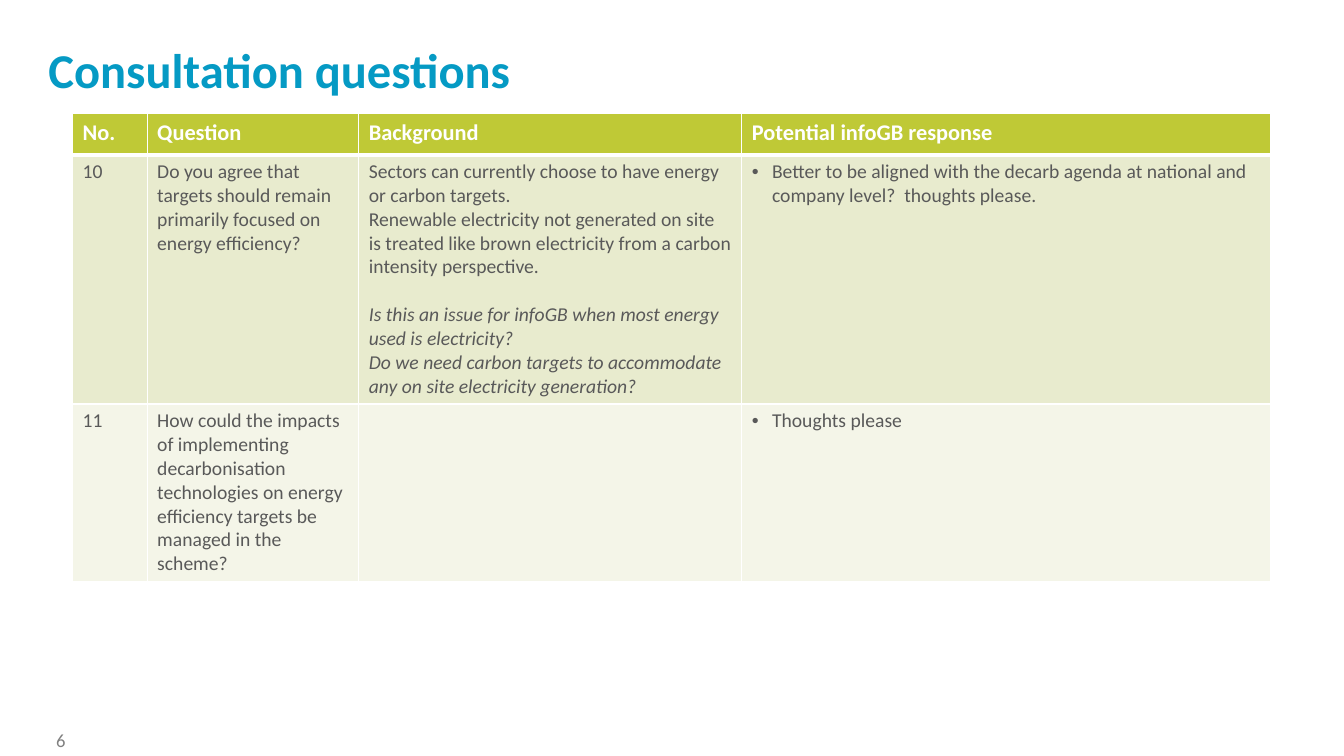
from dataclasses import dataclass

from lxml.etree import SubElement
from pptx import Presentation
from pptx.dml.color import RGBColor
from pptx.enum.text import MSO_ANCHOR as Anchor, PP_ALIGN as Align
from pptx.oxml.ns import qn
from pptx.util import Pt

COLORS = {
    "title": "059AC4",
    "header": "BFC936",
    "odd_row": "E8EBCE",
    "even_row": "F4F5E8",
    "body": "595959",
    "page": "808080",
    "white": "FFFFFF",
}
FONT = "Calibri"
TITLE_FORMAT = {"name": FONT, "size": Pt(34.7), "bold": True, "italic": False}
HEADER_FORMAT = {"name": FONT, "size": Pt(16), "bold": True, "italic": False}
BODY_FORMAT = {"name": FONT, "size": Pt(14), "bold": False, "italic": False}
PAGE_FORMAT = {"name": FONT, "size": Pt(13.3), "bold": False, "italic": False}

COLUMN_WIDTHS = (53.28, 151.2, 273.6, 378)
TABLE_LEFT, TABLE_TOP = 51.84, 81.36
BULLET_INDENT = Pt(14.4)
HEADER_RULE, CELL_RULE = Pt(3), Pt(1)


@dataclass(frozen=True)
class Line:
    text: str
    italic: bool = False
    bullet: bool = False
    space_before: float = 0


@dataclass(frozen=True)
class Row:
    height: float
    fill: str
    color: str
    format: dict
    cells: tuple[tuple[Line, ...], ...]


ROWS = (
    Row(29.2, "header", "white", HEADER_FORMAT, (
        (Line("No."),),
        (Line("Question"),),
        (Line("Background"),),
        (Line("Potential infoGB response"),),
    )),
    Row(178, "odd_row", "body", BODY_FORMAT, (
        (Line("10"),),
        (Line("Do you agree that targets should remain primarily focused on "
              "energy efficiency?"),),
        (
            Line("Sectors can currently choose to have energy or carbon targets."),
            Line("Renewable electricity not generated on site is treated like "
                 "brown electricity from a carbon intensity perspective."),
            Line("Is this an issue for infoGB when most energy used is "
                 "electricity?", italic=True, space_before=17),
            Line("Do we need carbon targets to accommodate any on site "
                 "electricity generation?", italic=True),
        ),
        (Line("Better to be aligned with the decarb agenda at national and "
              "company level?  thoughts please.", bullet=True),),
    )),
    Row(126.8, "even_row", "body", BODY_FORMAT, (
        (Line("11"),),
        (Line("How could the impacts of implementing decarbonisation "
              "technologies on energy efficiency targets be managed in the "
              "scheme?"),),
        (),
        (Line("Thoughts please", bullet=True),),
    )),
)


def rgb(color: str) -> RGBColor:
    return RGBColor.from_string(COLORS[color])


def format_font(font, values: dict, color: str) -> None:
    for attribute, value in values.items():
        setattr(font, attribute, value)
    font.color.rgb = rgb(color)


def add_bullet(paragraph) -> None:
    properties = paragraph._p.get_or_add_pPr()
    properties.set("marL", str(BULLET_INDENT))
    properties.set("indent", str(-BULLET_INDENT))
    SubElement(properties, qn("a:buFont"), typeface="Arial")
    SubElement(properties, qn("a:buChar"), char="•")


def add_borders(cell, top: int, bottom: int) -> None:
    properties = cell._tc.get_or_add_tcPr()
    widths = {"lnL": CELL_RULE, "lnR": CELL_RULE, "lnT": top, "lnB": bottom}
    for side, width in widths.items():
        border = SubElement(properties, qn(f"a:{side}"), w=str(width))
        fill = SubElement(border, qn("a:solidFill"))
        SubElement(fill, qn("a:srgbClr"), val=COLORS["white"])


def write_lines(frame, lines: tuple[Line, ...], values: dict, color: str) -> None:
    for index, line in enumerate(lines):
        paragraph = frame.add_paragraph() if index else frame.paragraphs[0]
        if line.space_before:
            paragraph.space_before = Pt(line.space_before)
        if line.bullet:
            add_bullet(paragraph)
        run = paragraph.add_run()
        run.text = line.text
        format_font(run.font, values | {"italic": line.italic}, color)


def add_title(slide) -> None:
    title = slide.shapes.title
    title.left, title.top, title.width, title.height = map(Pt, (27.36, 12.24, 864, 74.16))
    title.text_frame.vertical_anchor = Anchor.MIDDLE
    write_lines(title.text_frame, (Line("Consultation questions"),), TITLE_FORMAT, "title")
    title.text_frame.paragraphs[0].alignment = Align.LEFT


def add_questions(slide) -> None:
    table = slide.shapes.add_table(
        len(ROWS), len(COLUMN_WIDTHS), Pt(TABLE_LEFT), Pt(TABLE_TOP),
        Pt(sum(COLUMN_WIDTHS)), Pt(sum(row.height for row in ROWS)),
    ).table
    for column, width in zip(table.columns, COLUMN_WIDTHS):
        column.width = Pt(width)
    for index, row in enumerate(ROWS):
        table.rows[index].height = Pt(row.height)
        top = HEADER_RULE if index == 1 else CELL_RULE
        bottom = HEADER_RULE if index == 0 else CELL_RULE
        for cell, lines in zip(table.rows[index].cells, row.cells):
            add_borders(cell, top, bottom)
            cell.fill.solid()
            cell.fill.fore_color.rgb = rgb(row.fill)
            write_lines(cell.text_frame, lines, row.format, row.color)


def add_page_number(slide) -> None:
    page = slide.shapes.add_textbox(Pt(33.12), Pt(516.96), Pt(40.32), Pt(28.8))
    page.text_frame.word_wrap = True
    write_lines(page.text_frame, (Line("6"),), PAGE_FORMAT, "page")


def main() -> None:
    deck = Presentation()
    deck.slide_width, deck.slide_height = Pt(960), Pt(540)
    slide = deck.slides.add_slide(deck.slide_layouts[5])
    add_title(slide)
    add_page_number(slide)
    add_questions(slide)
    deck.save("out.pptx")


if __name__ == "__main__":
    main()
